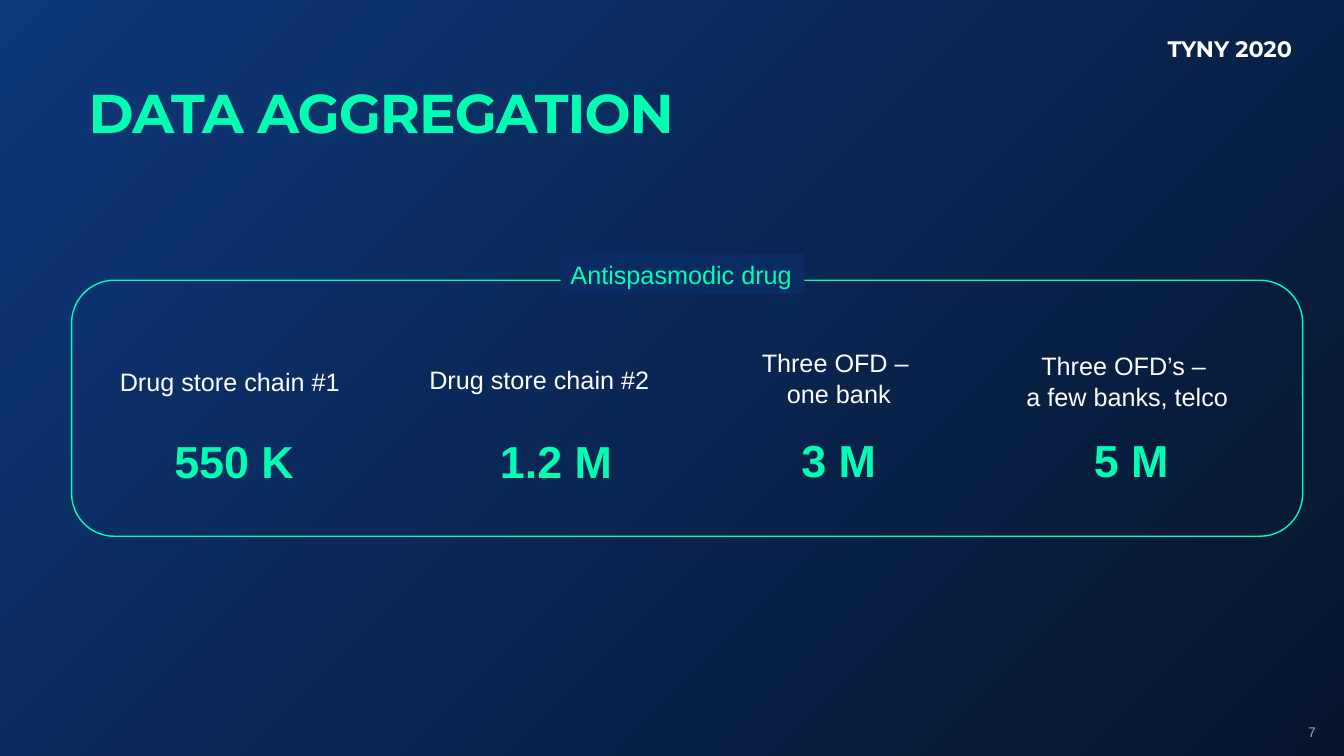
from dataclasses import dataclass

from lxml import etree
from pptx import Presentation
from pptx.dml.color import RGBColor
from pptx.enum.shapes import MSO_SHAPE
from pptx.enum.text import MSO_ANCHOR, MSO_AUTO_SIZE, PP_ALIGN
from pptx.oxml.ns import qn
from pptx.util import Inches, Pt

LEFT, MID, RIGHT = PP_ALIGN.LEFT, PP_ALIGN.CENTER, PP_ALIGN.RIGHT
TOP, CENTER = MSO_ANCHOR.TOP, MSO_ANCHOR.MIDDLE
RECT, ROUND = MSO_SHAPE.RECTANGLE, MSO_SHAPE.ROUNDED_RECTANGLE
GROW, FIXED = MSO_AUTO_SIZE.SHAPE_TO_FIT_TEXT, MSO_AUTO_SIZE.NONE


@dataclass(frozen=True)
class Theme:
    head: str = "Montserrat"
    body: str = "Arial"
    mint: str = "00FFB3"
    white: str = "FFFFFF"
    gray: str = "A7A7A7"
    band: str = "0B2C62"
    glow: str = "0E387B"
    night: str = "05142B"
    title: int = 39
    value: int = 32
    label: int = 18
    event: int = 16
    page: int = 10


class Deck:
    """Places elements by percent shares of the slide's width and height."""

    def __init__(self, theme):
        self.theme = theme
        self.prs = Presentation()
        self.prs.slide_width = Inches(13.33)
        self.prs.slide_height = Inches(7.5)
        self.slide = self.prs.slides.add_slide(self.prs.slide_layouts[5])

    def area(self, x, y, w, h):
        wide, high = self.prs.slide_width, self.prs.slide_height
        return [int(part * side / 100)
                for part, side in zip((x, y, w, h), (wide, high, wide, high))]

    def backdrop(self):
        fill = self.slide.background.fill
        fill.gradient()
        for stop, color in zip(fill.gradient_stops, (self.theme.glow, self.theme.night)):
            stop.color.rgb = RGBColor.from_string(color)
        # Radial fade from the top left corner
        line = self.slide.element.find(".//" + qn("a:lin"))
        grad = line.getparent()
        grad.remove(line)
        fade = etree.SubElement(grad, qn("a:path"), path="circle")
        etree.SubElement(fade, qn("a:fillToRect"), r="100000", b="100000")

    def letter(self, shape, text, size, color, font=None, bold=False,
               align=LEFT, anchor=TOP, wrap=False, fit=GROW, inset=None):
        frame = shape.text_frame
        frame.text = text
        frame.word_wrap = wrap
        frame.auto_size = fit
        frame.vertical_anchor = anchor
        if inset is not None:
            frame.margin_left = frame.margin_right = Inches(inset)
            frame.margin_top = frame.margin_bottom = Inches(inset)
        for para in frame.paragraphs:
            para.alignment = align
            for run in para.runs:
                run.font.name = font or self.theme.body
                run.font.size = Pt(size)
                run.font.bold = bold
                run.font.color.rgb = RGBColor.from_string(color)
        return frame

    def title(self, text, *spot):
        shape = self.slide.shapes.title
        shape.left, shape.top, shape.width, shape.height = self.area(*spot)
        frame = self.letter(shape, text, self.theme.title, self.theme.mint,
                            self.theme.head, True, wrap=True, fit=FIXED, inset=0)
        para = frame.paragraphs[0]
        para.line_spacing = 0.8
        para.runs[0]._r.get_or_add_rPr().set("spc", "-70")

    def text(self, text, spot, size, color, **style):
        box = self.slide.shapes.add_textbox(*self.area(*spot))
        self.letter(box, text, size, color, **style)

    def shape(self, kind, spot, fill=None, line=None):
        shape = self.slide.shapes.add_shape(kind, *self.area(*spot))
        shape.shadow.inherit = False
        if fill:
            shape.fill.solid()
            shape.fill.fore_color.rgb = RGBColor.from_string(fill)
        else:
            shape.fill.background()
        if line:
            shape.line.color.rgb = RGBColor.from_string(line)
            shape.line.width = Pt(1)
        else:
            shape.line.fill.background()
        return shape


def main():
    theme = Theme()
    deck = Deck(theme)
    deck.backdrop()

    # Header and page number
    deck.text("TYNY 2020", (86.5, 4, 11.85, 4.93), theme.event, theme.white,
              font=theme.head, bold=True, wrap=True, inset=0.05)
    deck.title("DATA AGGREGATION", 6.6, 12.13, 86.95, 5.87)
    deck.text("7", (95.05, 94.13, 3.6, 5.33), theme.page, theme.gray,
              align=RIGHT, anchor=CENTER, wrap=True, fit=FIXED)

    # Sources: label, its spot, value, its spot
    sources = [
        ("Drug store chain #1", (8.1, 47.73, 18, 5.33),
         "550 K", (12.23, 56.67, 10.5, 8.53)),
        ("Drug store chain #2", (31.13, 47.47, 18, 5.33),
         "1.2 M", (36.46, 56.67, 9.9, 8.53)),
        ("Three OFD – \none bank", (55.89, 45.33, 13.05, 9.47),
         "3 M", (58.89, 56.53, 7.13, 8.53)),
        ("Three OFD’s – \na few banks, telco", (73.29, 45.73, 21.16, 9.47),
         "5 M", (80.65, 56.53, 7.13, 8.53)),
    ]
    for label, place, value, spot in sources:
        deck.text(label, place, theme.label, theme.white, align=MID)
        deck.text(value, spot, theme.value, theme.mint, bold=True)

    # Frame with its caption on the top edge
    deck.shape(ROUND, (5.33, 37.07, 91.6, 33.87), line=theme.mint)
    band = deck.shape(RECT, (41.71, 33.6, 18.15, 5.33), fill=theme.band)
    deck.letter(band, "Antispasmodic drug", theme.label, theme.mint)

    deck.prs.save("out.pptx")


if __name__ == "__main__":
    main()
